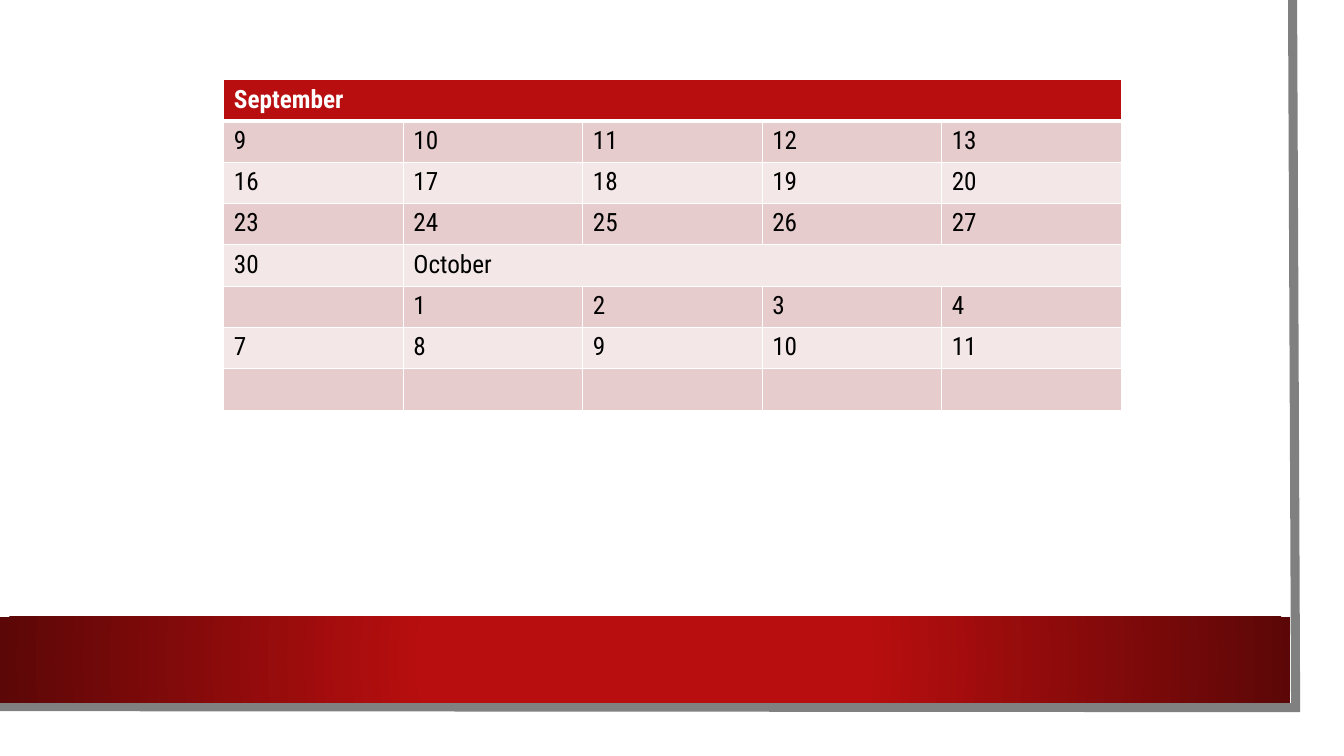
from lxml import etree
from pptx import Presentation
from pptx.dml.color import RGBColor
from pptx.enum.shapes import MSO_SHAPE
from pptx.oxml import parse_xml
from pptx.oxml.ns import qn
from pptx.util import Emu, Pt

RECTANGLE = MSO_SHAPE.RECTANGLE
PX = 9144  # 100 px to the inch
BLANK_LAYOUT = 6

WHITE = RGBColor(0xFF, 0xFF, 0xFF)
BLACK = RGBColor(0x00, 0x00, 0x00)
GRAY = RGBColor(0x80, 0x80, 0x80)
RED = RGBColor(0xB8, 0x0E, 0x0F)
DARK_RED = RGBColor(0x5C, 0x07, 0x07)
ROSE = RGBColor(0xE6, 0xCC, 0xCC)
PALE_ROSE = RGBColor(0xF3, 0xE7, 0xE7)

# None continues the cell to its left
CALENDAR = [
    ["September", None, None, None, None],
    ["9", "10", "11", "12", "13"],
    ["16", "17", "18", "19", "20"],
    ["23", "24", "25", "26", "27"],
    ["30", "October", None, None, None],
    ["", "1", "2", "3", "4"],
    ["7", "8", "9", "10", "11"],
    ["", "", "", "", ""],
]


class CalendarPage:
    font_name = "Roboto Condensed"
    font_size = Pt(18)

    def __init__(self, deck):
        self.page = deck.slides.add_slide(deck.slide_layouts[BLANK_LAYOUT])

    def rectangle(self, left, top, width, height, color):
        box = self.page.shapes.add_shape(
            RECTANGLE, *(Emu(side * PX) for side in (left, top, width, height)))
        box.shadow.inherit = False
        box.line.fill.background()
        box.fill.solid()
        box.fill.fore_color.rgb = color
        return box

    def radial_band(self, left, top, width, height, inner, outer):
        band = self.rectangle(left, top, width, height, inner)
        solid = band.element.spPr.find(qn("a:solidFill"))
        gradient = parse_xml(
            '<a:gradFill xmlns:a="http://schemas.openxmlformats.org/drawingml/2006/main"'
            ' rotWithShape="1"><a:gsLst>'
            f'<a:gs pos="34000"><a:srgbClr val="{inner}"/></a:gs>'
            f'<a:gs pos="100000"><a:srgbClr val="{outer}"/></a:gs></a:gsLst>'
            '<a:path path="circle"><a:fillToRect l="50000" t="50000" r="50000" b="50000"/>'
            '</a:path></a:gradFill>')
        band.element.spPr.replace(solid, gradient)

    def open_line(self, points, color, width):
        builder = self.page.shapes.build_freeform(*points[0], scale=PX)
        builder.add_line_segments(points[1:], close=False)
        edge = builder.convert_to_shape()
        edge.shadow.inherit = False
        edge.fill.background()
        edge.line.color.rgb = color
        edge.line.width = Pt(width)
        etree.SubElement(edge.line._get_or_add_ln(), qn("a:miter"), lim="800000")

    def border(self, cell, side, width):
        line = etree.SubElement(cell._tc.get_or_add_tcPr(), qn(f"a:ln{side}"),
                                w=str(Pt(width)))
        fill = etree.SubElement(line, qn("a:solidFill"))
        etree.SubElement(fill, qn("a:srgbClr"), val=str(WHITE))

    def table(self, left, top, column_width, row_height, rows):
        columns = len(rows[0])
        grid = self.page.shapes.add_table(
            len(rows), columns, Emu(left * PX), Emu(top * PX),
            Emu(columns * column_width * PX), Emu(len(rows) * row_height * PX)).table
        for column in grid.columns:
            column.width = Emu(column_width * PX)
        for index, texts in enumerate(rows):
            grid.rows[index].height = Emu(row_height * PX)
            if None in texts:
                first = texts.index(None) - 1
                grid.cell(index, first).merge(grid.cell(index, columns - 1))
            for position, text in enumerate(texts):
                self.cell(grid.cell(index, position), index, text)

    def cell(self, cell, row, text):
        header = row == 0
        # Borders come before the fill; the header rule is thicker
        for side in "TB" if cell.is_spanned else "LRTB":
            thick = (row, side) in ((0, "B"), (1, "T"))
            self.border(cell, side, 3 if thick else 1)
        cell.fill.solid()
        cell.fill.fore_color.rgb = RED if header else ROSE if row % 2 else PALE_ROSE
        if text is None:
            return
        cell.text = text
        font = cell.text_frame.paragraphs[0].font
        font.name = self.font_name
        font.size = self.font_size
        font.bold = header
        font.color.rgb = WHITE if header else BLACK


def main():
    deck = Presentation()
    deck.slide_width, deck.slide_height = Emu(1333 * PX), Emu(750 * PX)
    calendar = CalendarPage(deck)

    # Backdrop: sheet, gray edge and red band
    calendar.rectangle(0, 0, 1310, 727, WHITE)
    calendar.open_line([(1282, 0), (1285, 702), (-3, 701)], GRAY, 6.5)
    calendar.radial_band(0, 612, 1280, 85, RED, DARK_RED)

    # Weekday calendar
    calendar.table(222, 79, 178, 41, CALENDAR)

    deck.save("out.pptx")


if __name__ == "__main__":
    main()
